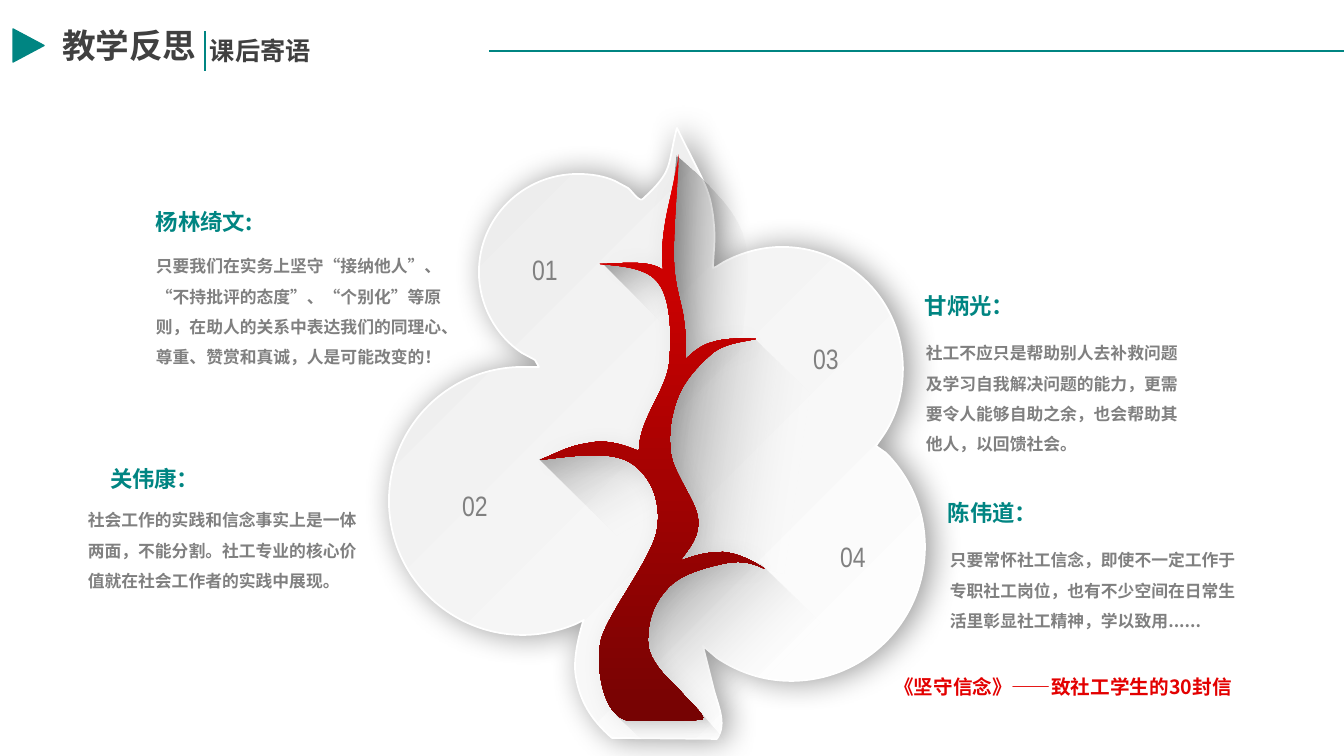
from lxml import etree
from pptx import Presentation
from pptx.dml.color import RGBColor
from pptx.enum.lang import MSO_LANGUAGE_ID as Lang
from pptx.enum.shapes import MSO_CONNECTOR as Connector, MSO_SHAPE as Preset
from pptx.enum.text import MSO_ANCHOR as Anchor, PP_ALIGN as Align
from pptx.oxml.ns import qn
from pptx.util import Emu, Pt

TEAL = RGBColor(0x00, 0x85, 0x82)
INK = RGBColor(0x40, 0x40, 0x40)
GRAY = RGBColor(0x80, 0x80, 0x80)
RED = RGBColor(0xE3, 0x00, 0x00)
MAROON = RGBColor(0x76, 0x03, 0x03)
BLACK = RGBColor(0x00, 0x00, 0x00)
WHITE = RGBColor(0xFF, 0xFF, 0xFF)
SILVER = RGBColor(0xC2, 0xC2, 0xC2)
MIST = RGBColor(0xEB, 0xEB, 0xEB)
CJK, NARROW = "Noto Sans CJK SC", "Arial Narrow"

TITLE = ("教学反思", (52, 20, 436, 50))
SUBTITLE = ("课后寄语", (200, 30, 121, 40))
BOOK = ("《坚守信念》——致社工学生的30封信", (874, 670, 378, 34))

# name, box, alignment, then message, box
LETTERS = [
    ("杨林绮文:", (146, 203, 159, 37), Align.LEFT,
     "只要我们在实务上坚守“接纳他人”、“不持批评的态度”、“个别化”等原则，"
     "在助人的关系中表达我们的同理心、尊重、赞赏和真诚，人是可能改变的！",
     (146, 241, 313, 132)),
    ("关伟康：", (85, 460, 102, 37), Align.RIGHT,
     "社会工作的实践和信念事实上是一体两面，不能分割。"
     "社工专业的核心价值就在社会工作者的实践中展现。",
     (78, 495, 300, 102)),
    ("甘炳光：", (915, 287, 162, 37), Align.LEFT,
     "社工不应只是帮助别人去补救问题及学习自我解决问题的能力，"
     "更需要令人能够自助之余，也会帮助其他人，以回馈社会。",
     (916, 328, 280, 132)),
    ("陈伟道：", (938, 494, 177, 37), Align.LEFT,
     "只要常怀社工信念，即使不一定工作于专职社工岗位，"
     "也有不少空间在日常生活里彰显社工精神，学以致用......",
     (940, 535, 306, 102)),
]
NUMBER_CENTRES = [(545, 270), (475, 506), (826, 359), (853, 557)]

# Outlines: pairs are corners, sixes are two Bezier handles and an end point
CROWN = [
    (677, 128), (704, 183, 709, 187, 713, 215), (716, 240, 714, 244, 713, 268),
    (716, 267), (724, 262), (741, 253, 761, 247, 782, 247),
    (849, 247, 903, 301, 903, 369), (903, 394, 896, 417, 883, 436),
    (876, 446), (886, 453), (910, 477, 925, 510, 925, 547),
    (925, 621, 865, 681, 791, 681), (763, 681, 738, 672, 717, 658),
    (703, 646), (713, 686), (717, 704, 728, 723, 717, 739), (612, 738),
    (590, 719, 580, 700, 576, 677), (573, 661, 578, 639, 583, 622),
    (584, 620), (576, 624), (559, 631, 541, 635, 523, 635),
    (449, 635, 389, 575, 389, 501), (389, 426, 449, 367, 523, 367), (530, 367),
    (539, 367), (535, 360), (522, 353), (496, 336, 479, 305, 479, 272),
    (479, 218, 523, 174, 578, 174), (591, 174, 604, 176, 615, 181),
    (628, 188), (633, 192, 640, 204, 644, 198), (674, 170, 667, 167, 677, 128),
]
TRUNK = [
    (700, 720), (690, 720, 662, 721, 632, 721), (603, 721, 595, 666, 601, 640),
    (608, 613, 652, 559, 657, 530), (662, 501, 650, 475, 631, 463),
    (612, 451, 579, 455, 540, 460), (568, 448, 570, 446, 589, 443),
    (607, 439, 624, 445, 639, 451), (639, 420, 665, 392, 669, 365),
    (672, 337, 671, 300, 659, 284), (648, 267, 619, 266, 600, 264),
    (618, 264, 649, 259, 663, 270), (662, 251, 662, 243, 665, 224),
    (668, 205, 672, 194, 679, 154), (678, 181, 673, 234, 674, 261),
    (675, 288, 682, 303, 684, 320), (686, 336, 686, 338, 686, 359),
    (697, 348, 705, 344, 713, 342), (722, 339, 735, 338, 756, 339),
    (742, 342, 727, 343, 714, 352), (702, 362, 686, 378, 679, 395),
    (672, 412, 668, 432, 671, 454), (674, 474, 696, 501, 698, 518),
    (700, 536, 691, 546, 680, 561), (698, 554, 710, 552, 723, 552),
    (737, 553, 754, 561, 765, 569), (755, 564, 743, 560, 727, 563),
    (711, 566, 683, 573, 670, 586), (657, 599, 648, 615, 648, 641),
    (648, 664, 674, 683, 684, 695), (694, 706, 710, 720, 700, 720),
]
# outline, first stop %, opacity %, last stop %, last colour, angle
SHADES = [
    ([(761, 565), (856, 659), (751, 765), (717, 732, 672, 701, 644, 660),
      (634, 599), (659, 573), (694, 566), (724, 556)], 0, 50, 59, WHITE, 45),
    ([(754, 339), (817, 401), (844, 586), (820, 582, 781, 573, 763, 568),
      (746, 563, 748, 561, 740, 558), (656, 572), (674, 509), (652, 439),
      (672, 380), (703, 350), (729, 340)], 0, 48, 73, WHITE, 8),
    ([(540, 460), (644, 562), (679, 515), (657, 464), (624, 455), (601, 449),
      (575, 450)], 0, 35, 68, WHITE, 60),
    ([(603, 264), (674, 336), (669, 281), (642, 268)], 3, 35, 83, WHITE, 50),
    ([(617, 716), (668, 763), (734, 762), (737, 755), (701, 713), (662, 680)],
     16, 57, 76, WHITE, 90),
    ([(677, 156), (701, 177, 731, 204, 742, 233), (752, 263, 746, 294, 742, 334),
      (679, 375), (667, 251)], 0, 50, 100, SILVER, 2),
]


def px(n):
    return Emu(round(n * 914400 / 100.8))


def bend(shape, outline):
    """Join each curve's three straight steps into one Bezier segment."""
    steps = iter(list(shape.element.spPr.iter(qn("a:lnTo"))))
    for segment in outline[1:]:
        first = next(steps)
        if len(segment) == 6:
            curve = first.makeelement(qn("a:cubicBezTo"), {})
            first.addprevious(curve)
            for step in (first, next(steps), next(steps)):
                curve.append(step[0])
                step.getparent().remove(step)


def add_alpha(colour, percent):
    etree.SubElement(colour, qn("a:alpha")).set("val", str(percent * 1000))


def add_outline(outline, stops, angle):
    """Draw a borderless outline; each stop is (position %, colour, opacity %)."""
    start, *rest = [(px(x), px(y)) for segment in outline
                    for x, y in zip(segment[::2], segment[1::2])]
    builder = slide.shapes.build_freeform(*start, scale=1.0)
    builder.add_line_segments(rest, close=True)
    shape = builder.convert_to_shape()
    bend(shape, outline)
    shape.fill.gradient()
    shape.fill.gradient_angle = 360 - angle
    for stop, (position, colour, opacity) in zip(shape.fill.gradient_stops, stops):
        stop.position = position / 100
        stop.color.rgb = colour
    for colour, stop in zip(shape.element.spPr.iter(qn("a:srgbClr")), stops):
        if stop[2] < 100:
            add_alpha(colour, stop[2])
    shape.line.fill.background()
    shape.shadow.inherit = False
    return shape


def cast_shadow(shape, opacity, blur, distance, angle):
    effects = shape.element.spPr.find(qn("a:effectLst"))
    shadow = etree.SubElement(effects, qn("a:outerShdw"), blurRad=str(Pt(blur)),
                              dist=str(Pt(distance)), dir=str(angle * 60000),
                              algn="ctr", rotWithShape="0")
    colour = etree.SubElement(shadow, qn("a:srgbClr"), val="000000")
    add_alpha(colour, opacity)


def place(shape, box):
    shape.left, shape.top, shape.width, shape.height = map(px, box)


def write(shape, text, size, colour, align=Align.LEFT, font=CJK, bold=True,
          spacing=1.0, wrap=True):
    frame = shape.text_frame
    frame.word_wrap = wrap
    frame.vertical_anchor = Anchor.TOP
    paragraph = frame.paragraphs[0]
    paragraph.alignment = align
    paragraph.line_spacing = spacing
    run = paragraph.add_run()
    run.text = text
    run.font.size, run.font.bold, run.font.name = Pt(size), bold, font
    run.font.color.rgb = colour
    run.font.language_id = Lang.SIMPLIFIED_CHINESE
    latin = run.font._element.find(qn("a:latin"))
    latin.addnext(latin.makeelement(qn("a:ea"), {"typeface": font}))


def add_text(text, box, size, colour, **style):
    write(slide.shapes.add_textbox(*map(px, box)), text, size, colour, **style)


def add_rule(x1, y1, x2, y2, width):
    rule = slide.shapes.add_connector(Connector.STRAIGHT, *map(px, (x1, y1, x2, y2)))
    rule.line.color.rgb = TEAL
    rule.line.width = Pt(width)
    etree.SubElement(rule.element.spPr, qn("a:effectLst"))


deck = Presentation()
deck.slide_width, deck.slide_height = px(1344), px(756)
slide = deck.slides.add_slide(deck.slide_layouts[5])

add_rule(489, 51, 1344, 51, 1)
place(slide.shapes.title, TITLE[1])
write(slide.shapes.title, TITLE[0], 24, INK)
add_text(*SUBTITLE, 18, INK, wrap=False)
add_rule(205, 71, 205, 31, 1.75)
marker = slide.shapes.add_shape(Preset.ISOSCELES_TRIANGLE, *map(px, (12, 30, 33, 31)))
marker.rotation = 90
marker.fill.solid()
marker.fill.fore_color.rgb = marker.line.color.rgb = TEAL
marker.line.width = Pt(1)
marker.shadow.inherit = False

crown = add_outline(CROWN, [(0, MIST, 100), (100, WHITE, 100)], 45)
crown.line.color.rgb = WHITE
crown.line.width = Pt(1.25)
cast_shadow(crown, 40, 22, 4, 0)
for outline, first, opacity, last, end_colour, angle in SHADES:
    add_outline(outline, [(first, BLACK, opacity), (last, end_colour, 0)], angle)
trunk = add_outline(TRUNK, [(0, RED, 100), (100, MAROON, 100)], 90)
cast_shadow(trunk, 7, 16, 3, 45)

for number, (x, y) in enumerate(NUMBER_CENTRES, 1):
    add_text(f"{number:02d}", (x - 75, y - 22, 150, 44), 20, GRAY,
             align=Align.CENTER, font=NARROW, bold=False)
for name, name_box, align, message, message_box in LETTERS:
    add_text(name, name_box, 16, TEAL, align=align)
    add_text(message, message_box, 12, GRAY, spacing=1.5)
add_text(*BOOK, 14, RED, align=Align.CENTER)

deck.save("out.pptx")
